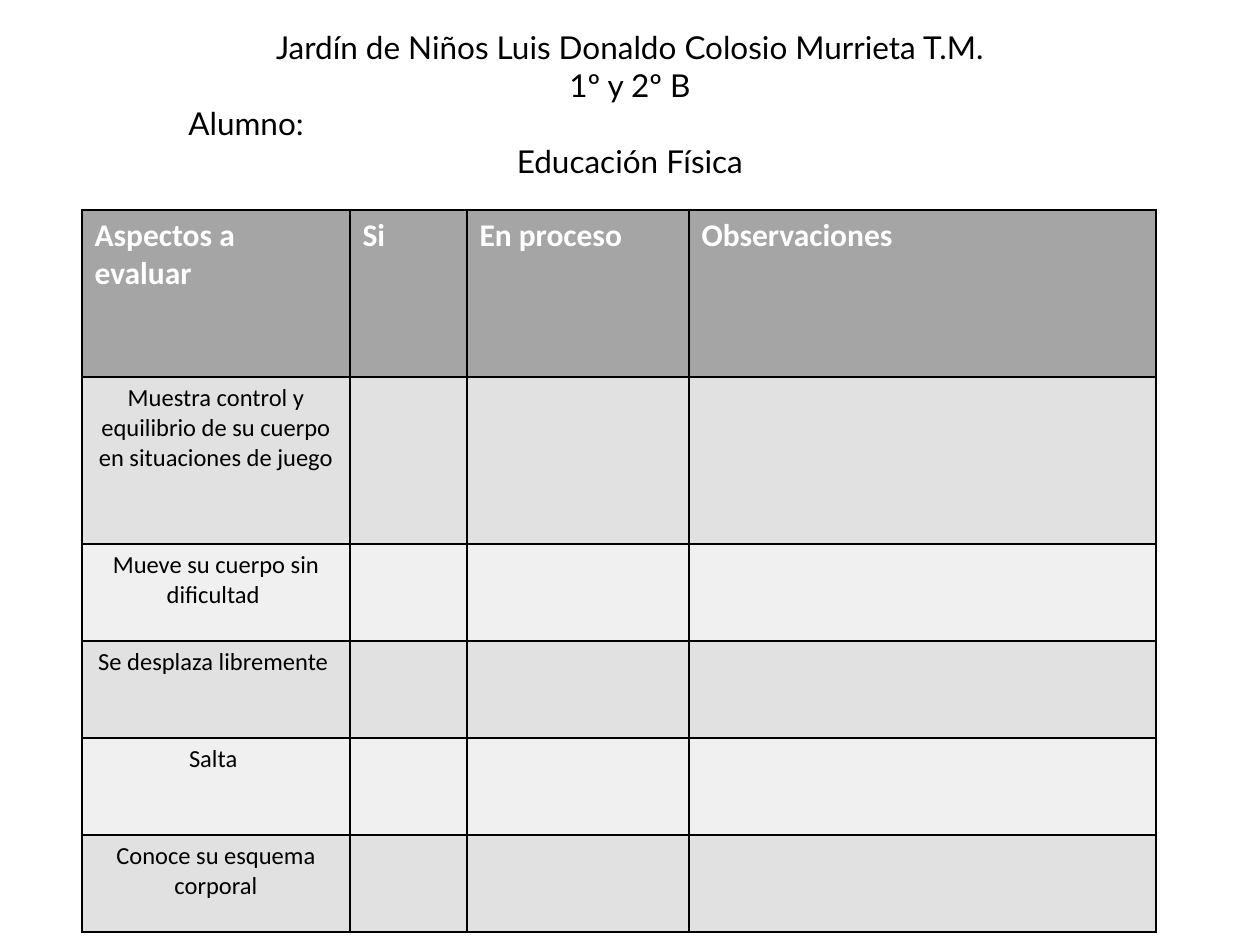
from lxml import etree
from pptx import Presentation
from pptx.dml.color import RGBColor
from pptx.enum.text import PP_ALIGN
from pptx.oxml.ns import qn
from pptx.util import Emu, Pt

CENTER, LEFT = PP_ALIGN.CENTER, PP_ALIGN.LEFT
BLACK = RGBColor(0x00, 0x00, 0x00)
WHITE = RGBColor(0xFF, 0xFF, 0xFF)
HEADER_GRAY = RGBColor(0xA5, 0xA5, 0xA5)
BAND_DARK = RGBColor(0xE1, 0xE1, 0xE1)
BAND_LIGHT = RGBColor(0xF0, 0xF0, 0xF0)


def px(length):
    return Emu(round(length * 914400 / 126))


def add_borders(cell):
    properties = cell._tc.get_or_add_tcPr()
    for side in ("a:lnL", "a:lnR", "a:lnT", "a:lnB"):
        line = etree.SubElement(properties, qn(side), w=str(Pt(1)))
        fill = etree.SubElement(line, qn("a:solidFill"))
        etree.SubElement(fill, qn("a:srgbClr"), val=str(BLACK))


deck = Presentation()
deck.slide_width, deck.slide_height = px(1260), px(945)
page = deck.slides.add_slide(deck.slide_layouts[6])

# Evaluation table
headers = ["Aspectos a evaluar", "Si", "En proceso", "Observaciones"]
aspects = [
    "Muestra control y equilibrio de su cuerpo en situaciones de juego",
    "Mueve su cuerpo sin dificultad ",
    "Se desplaza libremente ",
    "Salta ",
    "Conoce su esquema corporal",
]
column_widths = [268, 117, 222, 467]
row_heights = [167, 167, 97, 97, 97, 97]
table = page.shapes.add_table(
    len(row_heights), len(column_widths), px(82), px(210),
    px(sum(column_widths)), px(sum(row_heights))).table
for column, width in zip(table.columns, column_widths):
    column.width = px(width)
for row, height in zip(table.rows, row_heights):
    row.height = px(height)

rows = [headers] + [[aspect, "", "", ""] for aspect in aspects]
for row_number, texts in enumerate(rows):
    is_header = row_number == 0
    band = BAND_DARK if row_number % 2 else BAND_LIGHT
    for column_number, text in enumerate(texts):
        cell = table.cell(row_number, column_number)
        add_borders(cell)
        cell.fill.solid()
        cell.fill.fore_color.rgb = HEADER_GRAY if is_header else band
        if not text:
            continue
        cell.text_frame.text = text
        para = cell.text_frame.paragraphs[0]
        para.alignment = LEFT if is_header else CENTER
        font = para.runs[0].font
        font.name = "Calibri"
        font.size = Pt(18 if is_header else 14)
        font.bold = is_header
        font.color.rgb = WHITE if is_header else BLACK

# Heading
heading = [
    ("Jardín de Niños Luis Donaldo Colosio Murrieta T.M.", CENTER),
    ("1º y 2º B", CENTER),
    ("Alumno:", LEFT),
    ("Educación Física", CENTER),
]
box = page.shapes.add_textbox(px(176), px(22), px(908), px(165))
frame = box.text_frame
frame.word_wrap = True
frame.text = "\n".join(text for text, alignment in heading)
for para, (text, alignment) in zip(frame.paragraphs, heading):
    para.alignment = alignment
    font = para.runs[0].font
    font.name = "Lato"
    font.size = Pt(18)
    font.color.rgb = BLACK

deck.save("out.pptx")
